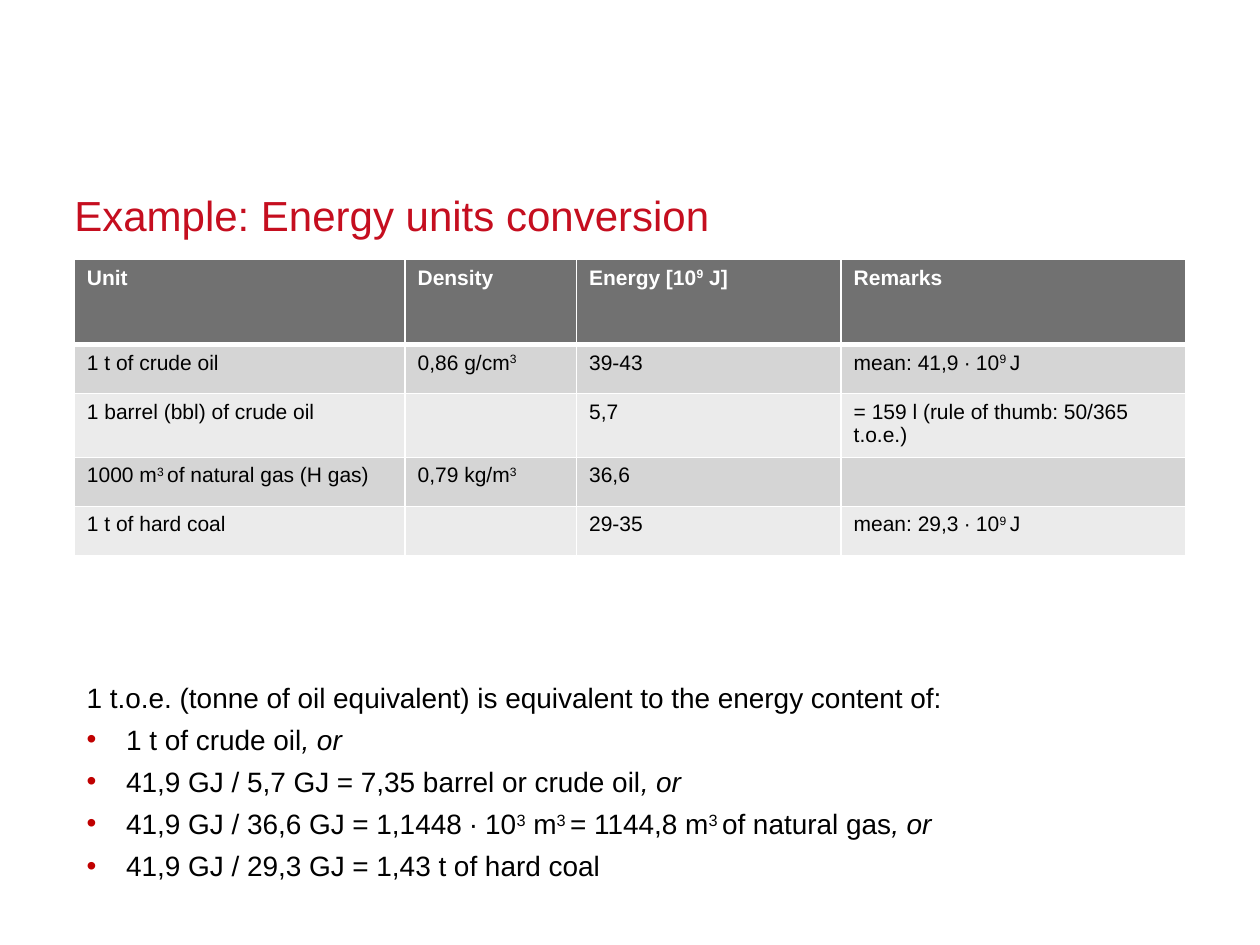
from pptx import Presentation
from pptx.dml.color import RGBColor
from pptx.enum.text import MSO_ANCHOR as Anchor, PP_ALIGN as Align
from pptx.oxml import parse_xml
from pptx.oxml.ns import nsdecls
from pptx.util import Pt

THEME = {
    "font": "Arial",
    "title_size": 24, "body_size": 16, "table_size": 12,
    "red": "C50E1F", "bullet": "C00000", "black": "000000", "white": "FFFFFF",
    "header": "717171", "bands": ("D5D5D5", "EBEBEB"),
}


def write_text(paragraph, text, size, color, bold=False):
    """Write text where _..._ marks italics and ^...^ marks superscript."""
    for i, part in enumerate(text.split("_")):
        for j, piece in enumerate(part.split("^")):
            if not piece:
                continue
            run = paragraph.add_run()
            run.text = piece
            formats = {"name": THEME["font"], "size": Pt(size),
                       "bold": bold, "italic": i % 2 == 1}
            for name, value in formats.items():
                setattr(run.font, name, value)
            run.font.color.rgb = RGBColor.from_string(color)
            if j % 2:
                run._r.get_or_add_rPr().set("baseline", "30000")


def add_border(cell, side, width):
    cell._tc.get_or_add_tcPr().append(parse_xml(
        f'<a:ln{side} {nsdecls("a")} w="{Pt(width)}"><a:solidFill>'
        f'<a:srgbClr val="{THEME["white"]}"/></a:solidFill></a:ln{side}>'))


presentation = Presentation()
presentation.slide_width, presentation.slide_height = Pt(720), Pt(540)
slide = presentation.slides.add_slide(presentation.slide_layouts[6])
left, width = 42.5, 635

# Title
title = slide.shapes.add_textbox(Pt(left), Pt(108.7), Pt(width), Pt(28.1))
frame = title.text_frame
frame_formats = {"word_wrap": True, "vertical_anchor": Anchor.BOTTOM,
                 "margin_left": 0, "margin_right": 0,
                 "margin_top": 0, "margin_bottom": 0}
for name, value in frame_formats.items():
    setattr(frame, name, value)
frame.paragraphs[0].line_spacing = Pt(30)
write_text(frame.paragraphs[0], "Example: Energy units conversion",
           THEME["title_size"], THEME["red"])

# Conversion table
rows = [
    ("Unit", "Density", "Energy [10^9^ J]", "Remarks"),
    ("1 t of crude oil", "0,86 g/cm^3^", "39-43", "mean: 41,9 ∙ 10^9 ^J"),
    ("1 barrel (bbl) of crude oil", "", "5,7",
     "= 159 l (rule of thumb: 50/365 t.o.e.)"),
    ("1000 m^3 ^of natural gas (H gas)", "0,79 kg/m^3^", "36,6", ""),
    ("1 t of hard coal", "", "29-35", "mean: 29,3 ∙ 10^9 ^J"),
]
column_widths = (189, 98, 151.2, 196.8)
row_heights = (48.6, 28, 36.4, 28, 28)
table = slide.shapes.add_table(len(rows), len(column_widths), Pt(left), Pt(148.4),
                               Pt(width), Pt(sum(row_heights))).table
for column, column_width in zip(table.columns, column_widths):
    column.width = Pt(column_width)
for r, (texts, height) in enumerate(zip(rows, row_heights)):
    table.rows[r].height = Pt(height)
    is_header = r == 0
    fill = THEME["header"] if is_header else THEME["bands"][(r - 1) % 2]
    color = THEME["white"] if is_header else THEME["black"]
    border_widths = {"L": 1, "R": 1, "T": 3 if r == 1 else 1,
                     "B": 3 if is_header else 1}
    for c, text in enumerate(texts):
        cell = table.cell(r, c)
        for side, border_width in border_widths.items():
            add_border(cell, side, border_width)
        cell.fill.solid()
        cell.fill.fore_color.rgb = RGBColor.from_string(fill)
        paragraph = cell.text_frame.paragraphs[0]
        paragraph.alignment = Align.LEFT
        paragraph.font.size = Pt(THEME["table_size"])
        write_text(paragraph, text, THEME["table_size"], color, is_header)

# Equivalents of one t.o.e.
lines = [
    "1 t.o.e. (tonne of oil equivalent) is equivalent to the energy content of:",
    "1 t of crude oil_, or_",
    "41,9 GJ / 5,7 GJ = 7,35 barrel or crude oil_, or_",
    "41,9 GJ / 36,6 GJ = 1,1448 ∙ 10^3^ m^3 ^= 1144,8 m^3 ^of natural gas_, or_",
    "41,9 GJ / 29,3 GJ = 1,43 t of hard coal",
]
body = slide.shapes.add_textbox(Pt(left), Pt(389), Pt(621.4), Pt(123.8))
frame = body.text_frame
frame.word_wrap = True
for index, line in enumerate(lines):
    paragraph = frame.add_paragraph() if index else frame.paragraphs[0]
    paragraph.line_spacing = 0.8
    if index:
        paragraph.space_before = Pt(8.7)
        properties = paragraph._p.get_or_add_pPr()
        properties.set("marL", str(Pt(22.5)))
        properties.set("indent", str(Pt(-22.5)))
        for bullet in (f'buClr {nsdecls("a")}><a:srgbClr val="{THEME["bullet"]}"/></a:buClr>',
                       f'buFont {nsdecls("a")} typeface="{THEME["font"]}"/>',
                       f'buChar {nsdecls("a")} char="•"/>'):
            properties.append(parse_xml("<a:" + bullet))
    write_text(paragraph, line, THEME["body_size"], THEME["black"])

presentation.save("out.pptx")
